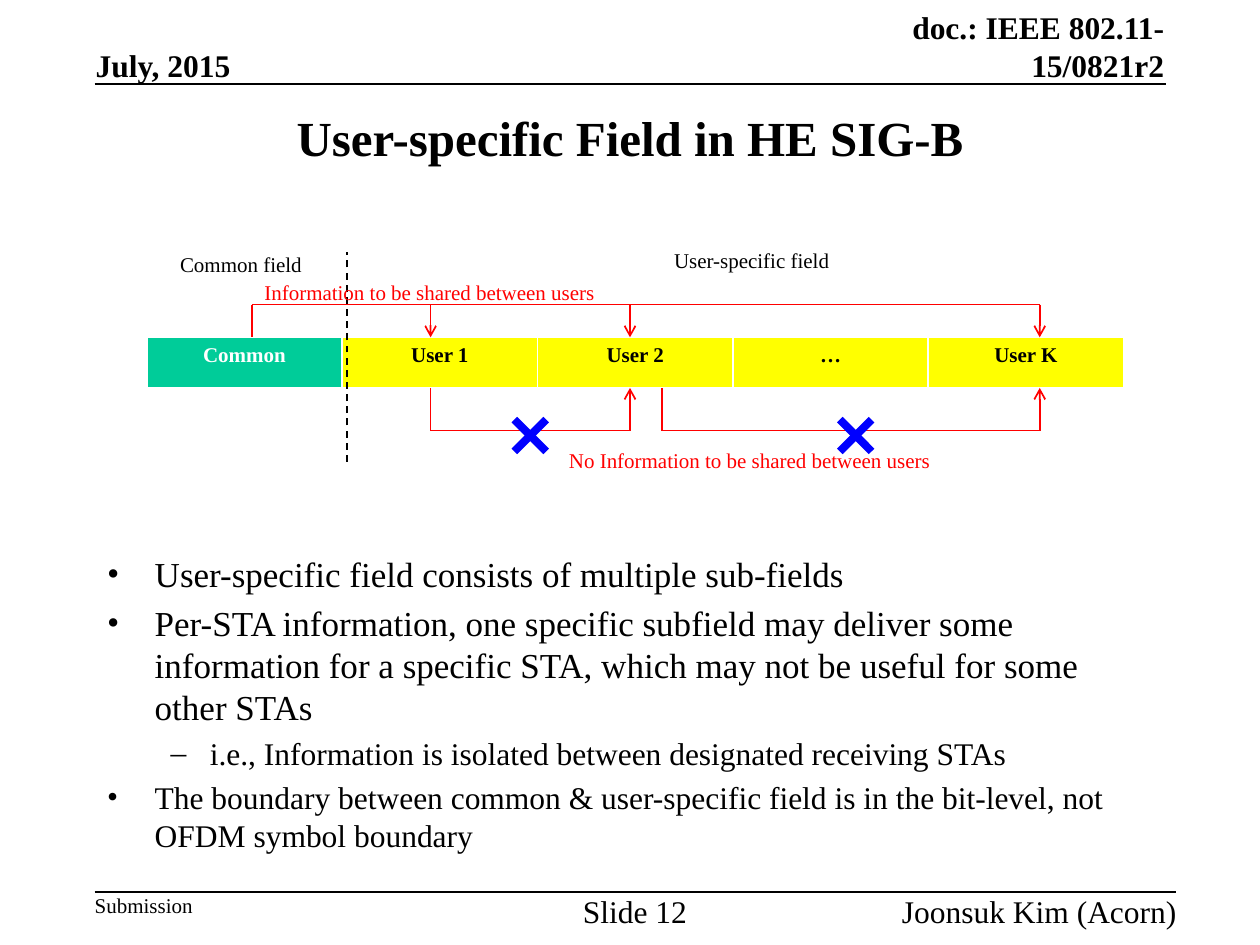
from lxml import etree
from pptx import Presentation
from pptx.dml.color import RGBColor
from pptx.enum import dml, shapes, text
from pptx.oxml import ns
from pptx.util import Cm, Pt

BLACK = RGBColor(0, 0, 0)
WHITE = RGBColor(255, 255, 255)
RED = RGBColor(255, 0, 0)
BLUE = RGBColor(0, 0, 255)
GREEN = RGBColor(0, 0xCC, 0x99)
YELLOW = RGBColor(255, 255, 0)
FONT = "Times New Roman"
LEFT, CENTER, RIGHT = text.PP_ALIGN.LEFT, text.PP_ALIGN.CENTER, text.PP_ALIGN.RIGHT
TOP, MIDDLE, BOTTOM = text.MSO_ANCHOR.TOP, text.MSO_ANCHOR.MIDDLE, text.MSO_ANCHOR.BOTTOM

TITLE = "User-specific Field in HE SIG-B"
MARGINALS = [
    ("July, 2015", (1.93, 0.93, 2.82, 0.76), LEFT, BOTTOM, 18, True),
    ("doc.: IEEE 802.11-15/0821r2", (17.87, 0.17, 5.6, 1.52), RIGHT, BOTTOM, 18, True),
    ("Submission", (1.91, 17.99, 2.4, 0.51), LEFT, TOP, 12, False),
    ("Slide 12", (11.3, 17.99, 3, 0.76), CENTER, TOP, 18, False),
    ("Joonsuk Kim (Acorn)", (17.2, 17.99, 6.52, 0.76), RIGHT, TOP, 18, False),
]
RULES = [(1.91, 1.7, 23.5), (1.91, 17.98, 23.7)]
FIELDS = [
    ("Common", GREEN, WHITE),
    ("User 1", YELLOW, BLACK),
    ("User 2", YELLOW, BLACK),
    ("…", YELLOW, BLACK),
    ("User K", YELLOW, BLACK),
]
LABELS = [
    ("Common field", (3.38, 4.95, 3, 0.76), BLACK),
    ("User-specific field", (13.34, 4.87, 3.68, 0.76), BLACK),
    ("Information to be shared between users", (5.08, 5.51, 7.24, 0.76), RED),
    ("No Information to be shared between users", (11.22, 8.89, 7.9, 0.76), RED),
]
SHARED_FROM, SHARED_TO = 5.08, [8.68, 12.7, 20.96]
SHARED_Y, FIELDS_TOP, FIELDS_BOTTOM, ISOLATED_Y = 6.14, 6.8, 7.82, 8.68
ISOLATED = [(8.68, 10.69, 12.7), (13.34, 17.25, 20.96)]
CROSS_Y, CROSS_HALF = 8.78, 0.32
BOUNDARY = (6.99, 9.31, 6.99, 5.08)
POINTS = [
    ("User-specific field consists of multiple sub-fields", 20, "•", 0.96, 0.96),
    ("Per-STA information, one specific subfield may deliver some information for a "
     "specific STA, which may not be useful for some other STAs", 20, "•", 0.96, 0.96),
    ("i.e., Information is isolated between designated receiving STAs", 18, "–", 2.07, 0.79),
    ("The boundary between common & user-specific field is in the bit-level, not OFDM "
     "symbol boundary", 18, "•", 0.96, 0.96),
]


def write(paragraph, words, size, color=BLACK, bold=False, align=LEFT):
    paragraph.alignment = align
    run = paragraph.add_run()
    run.text = words
    run.font.name = FONT
    run.font.size = Pt(size)
    run.font.bold = bold
    run.font.color.rgb = color


def add_frame(slide, place, wrap=False, inset=True, anchor=TOP):
    frame = slide.shapes.add_textbox(*map(Cm, place)).text_frame
    frame.word_wrap = wrap
    frame.vertical_anchor = anchor
    if not inset:
        frame.margin_left = frame.margin_right = frame.margin_top = frame.margin_bottom = 0
    return frame


def add_line(slide, ends, color=RED, width=1, arrow=False, dashed=False):
    line = slide.shapes.add_connector(shapes.MSO_CONNECTOR.STRAIGHT, *map(Cm, ends))
    line.line.color.rgb = color
    line.line.width = Pt(width)
    if dashed:
        line.line.dash_style = dml.MSO_LINE.DASH
    if arrow:
        etree.SubElement(line.line._get_or_add_ln(), ns.qn("a:tailEnd"), type="arrow")
    etree.SubElement(line._element.spPr, ns.qn("a:effectLst"))


def add_bullet(paragraph, mark, indent, hanging):
    properties = paragraph._p.get_or_add_pPr()
    properties.set("marL", str(Cm(indent)))
    properties.set("indent", str(-Cm(hanging)))
    etree.SubElement(properties, ns.qn("a:buFont"), typeface=FONT)
    etree.SubElement(properties, ns.qn("a:buChar"), char=mark)


def add_header_and_footer(slide):
    for words, place, align, anchor, size, bold in MARGINALS:
        frame = add_frame(slide, place, wrap=True, inset=False, anchor=anchor)
        write(frame.paragraphs[0], words, size, bold=bold, align=align)
    for left, y, right in RULES:
        add_line(slide, (left, y, right, y), BLACK)


def add_title(slide):
    title = slide.shapes.title
    title.left, title.top, title.width, title.height = map(Cm, (1.9, 1.9, 21.6, 1.7))
    title.text_frame.vertical_anchor = MIDDLE
    write(title.text_frame.paragraphs[0], TITLE, 28, bold=True, align=CENTER)


def add_fields(slide):
    place = map(Cm, (2.96, FIELDS_TOP, 19.69, FIELDS_BOTTOM - FIELDS_TOP))
    fields = slide.shapes.add_table(1, len(FIELDS), *place).table
    for cell, (name, fill, color) in zip(fields.iter_cells(), FIELDS):
        cell.fill.solid()
        cell.fill.fore_color.rgb = fill
        write(cell.text_frame.paragraphs[0], name, 12, color, True, CENTER)


def add_flows(slide):
    add_line(slide, (SHARED_FROM, SHARED_Y, SHARED_TO[-1], SHARED_Y))
    add_line(slide, (SHARED_FROM, SHARED_Y, SHARED_FROM, FIELDS_TOP))
    for x in SHARED_TO:
        add_line(slide, (x, SHARED_Y, x, FIELDS_TOP), arrow=True)
    for start, cross, end in ISOLATED:
        add_line(slide, (start, FIELDS_BOTTOM, start, ISOLATED_Y))
        add_line(slide, (start, ISOLATED_Y, end, ISOLATED_Y))
        add_line(slide, (end, ISOLATED_Y, end, FIELDS_BOTTOM), arrow=True)
        for rise in (CROSS_HALF, -CROSS_HALF):
            add_line(slide, (cross - CROSS_HALF, CROSS_Y - rise,
                             cross + CROSS_HALF, CROSS_Y + rise), BLUE, 4.5)
    add_line(slide, BOUNDARY, BLACK, dashed=True)


def add_points(slide):
    frame = add_frame(slide, (1.91, 11.01, 21.6, 5.92), wrap=True)
    for number, (words, size, mark, indent, hanging) in enumerate(POINTS):
        point = frame.add_paragraph() if number else frame.paragraphs[0]
        point.space_before = Pt(size * 0.2)
        write(point, words, size)
        add_bullet(point, mark, indent, hanging)


def main():
    deck = Presentation()
    deck.slide_width, deck.slide_height = Cm(25.4), Cm(19.05)
    slide = deck.slides.add_slide(deck.slide_layouts[5])
    add_header_and_footer(slide)
    add_title(slide)
    add_points(slide)
    add_fields(slide)
    add_flows(slide)
    for words, place, color in LABELS:
        write(add_frame(slide, place).paragraphs[0], words, 12, color)
    deck.save("out.pptx")


if __name__ == "__main__":
    main()
